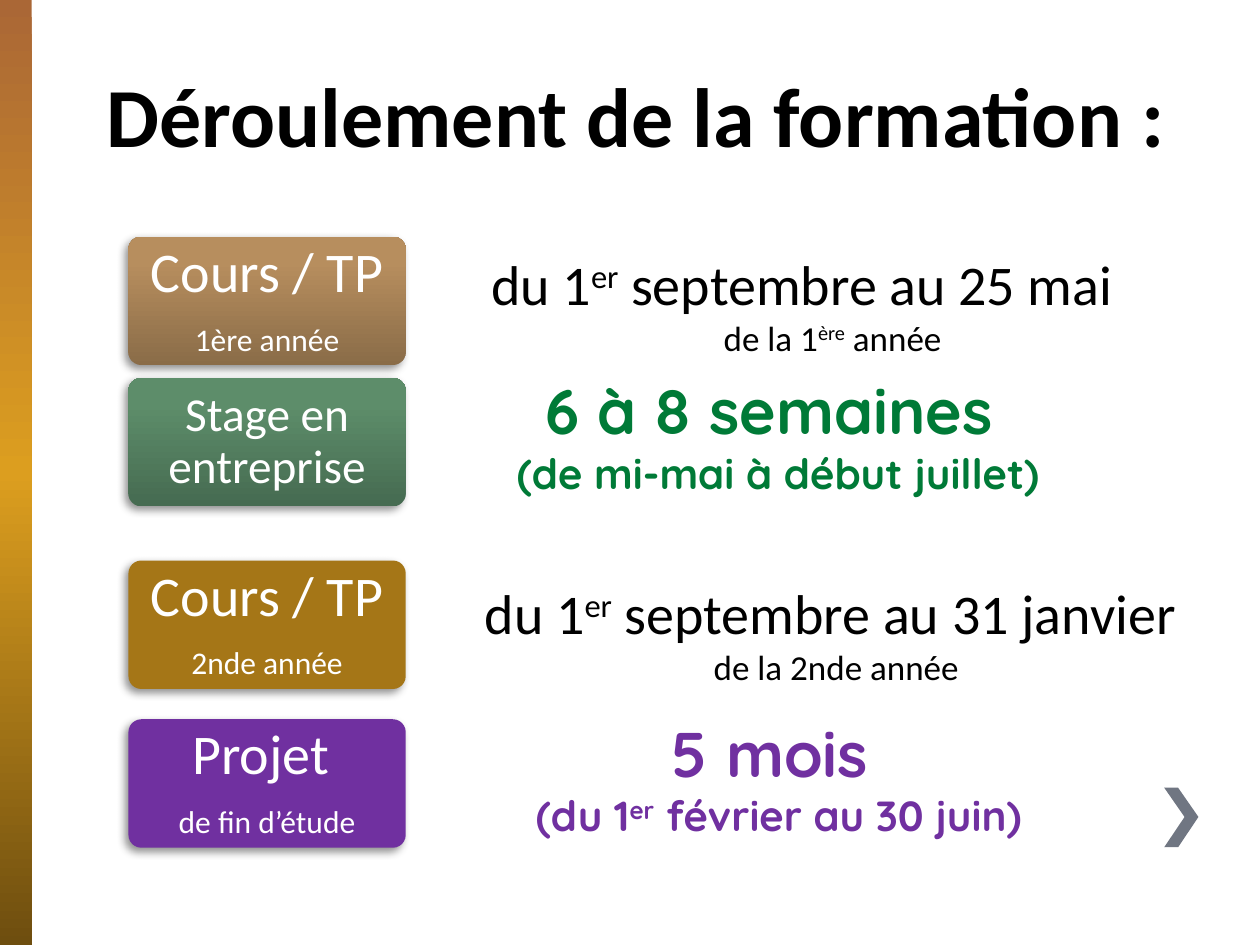
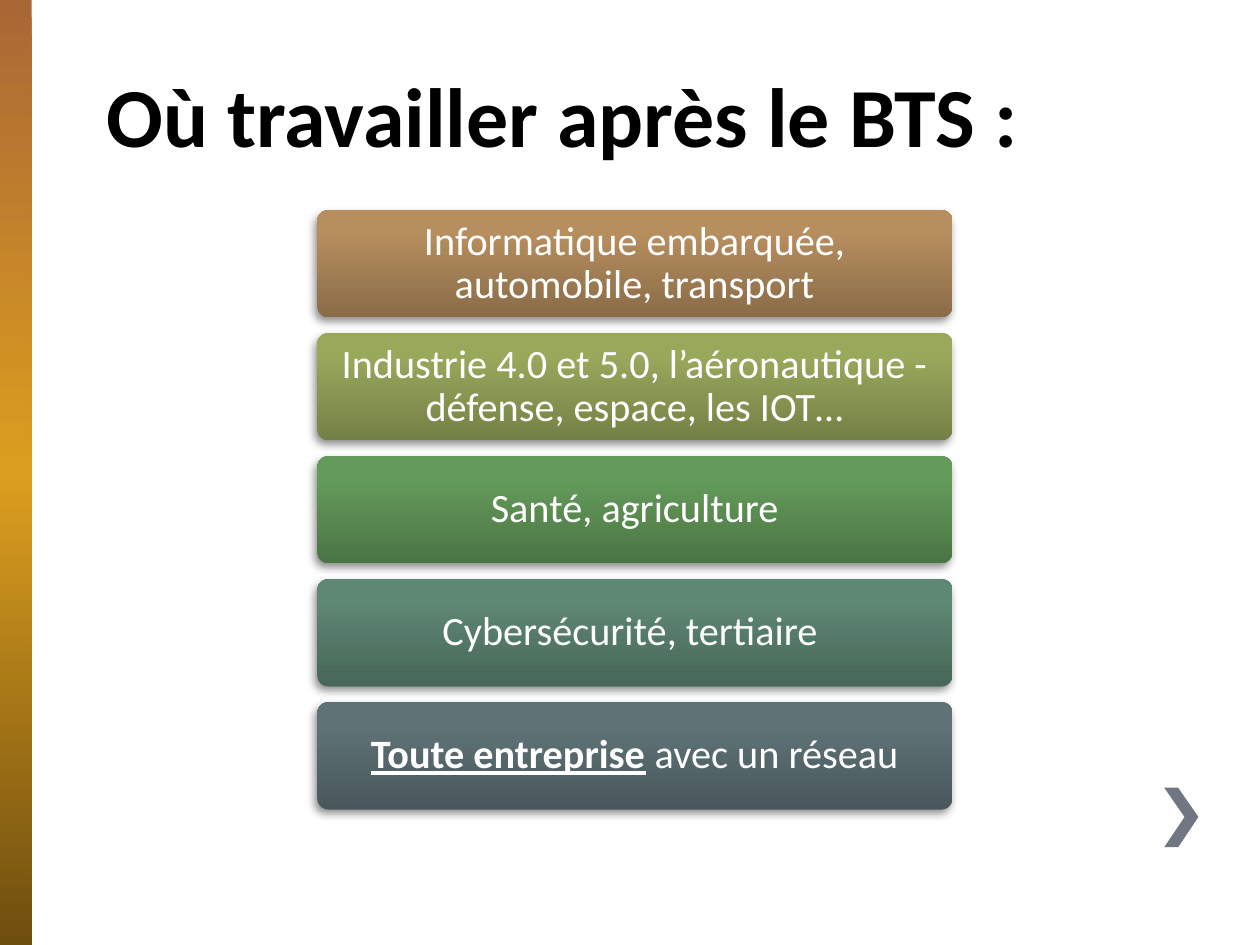
from dataclasses import dataclass
from copy import deepcopy
from lxml.etree import SubElement
from pptx import Presentation
from pptx.dml.color import RGBColor
from pptx.enum.shapes import MSO_SHAPE
from pptx.enum.text import MSO_ANCHOR, PP_ALIGN
from pptx.oxml.ns import qn
from pptx.shapes.autoshape import Shape
from pptx.slide import Slide
from pptx.text.text import TextFrame
from pptx.util import Cm, Pt

COLORS = {
    "black": "000000", "white": "FFFFFF", "chevron": "707682", "shadow": "000000",
    "gold": "A57617", "purple": "7030A0", "green": "007A37",
}
BLENDS = {
    "band": ((0, "AA6736"), (50, "DC9E1F"), (100, "6E4E0F")),
    "brown": ((0, "8A6C48"), (80, "B78E5E"), (100, "BA8E5C")),
    "forest": ((0, "466B51"), (80, "5D8D6A"), (100, "5D8F69")),
    "olive": ((0, "758046"), (80, "9AA85C"), (100, "9BAB5B")),
    "leaf": ((0, "4B7545"), (80, "649B5A"), (100, "639C5A")),
    "teal": ((0, "476758"), (80, "5E8774"), (100, "5E8974")),
    "slate": ((0, "48575B"), (80, "5F7377"), (100, "5F7478")),
}
UPWARD, DOWNWARD = 90, 270
CHEVRON = ((23.75, 15.88), (23.47, 15.88), (23.88, 16.47),
           (23.47, 17.08), (23.75, 17.08), (24.16, 16.47))
HEIGHT = 19.05


@dataclass(frozen=True)
class Area:
    left: float
    top: float
    width: float
    height: float

    def lengths(self) -> tuple:
        return Cm(self.left), Cm(self.top), Cm(self.width), Cm(self.height)


@dataclass(frozen=True)
class Line:
    text: str
    size: float
    center: bool = True
    before: float = 0


@dataclass(frozen=True)
class Style:
    color: str
    font: str = "Calibri"
    bold: bool = False
    spacing: float = 1.0
    mark: str = "raise"


@dataclass(frozen=True)
class Card:
    area: Area
    fill: str
    lines: tuple


@dataclass(frozen=True)
class Note:
    area: Area
    style: Style
    lines: tuple


TITLE = Style("black", bold=True, spacing=0.9)
LABEL = Style("white", spacing=0.9, mark="stress")
DATE = Style("black")
STAGE = Style("green", "Quicksand", True)
PROJECT = Style("purple", "Quicksand", True)


def rgb(name: str) -> RGBColor:
    return RGBColor.from_string(COLORS[name])


def write(frame: TextFrame, lines: tuple, style: Style) -> None:
    frame.word_wrap = True
    for row, line in enumerate(lines):
        para = frame.add_paragraph() if row else frame.paragraphs[0]
        para.alignment = PP_ALIGN.CENTER if line.center else PP_ALIGN.LEFT
        para.line_spacing = style.spacing
        if line.before:
            para.space_before = Pt(line.before)
        for order, piece in enumerate(line.text.split("^")):
            if not piece:
                continue
            run = para.add_run()
            run.text = piece
            font = run.font
            font.name, font.size, font.bold = style.font, Pt(line.size), style.bold
            font.color.rgb = rgb(style.color)
            if order % 2 and style.mark == "raise":
                run._r.get_or_add_rPr().set("baseline", "30000")
            elif order % 2:
                font.bold = font.underline = True


def paint(shape: Shape, fill: str, angle: int = UPWARD) -> None:
    shape.shadow.inherit = False
    shape.line.fill.background()
    if fill in COLORS:
        shape.fill.solid()
        shape.fill.fore_color.rgb = rgb(fill)
        return
    shape.fill.gradient()
    shape.fill.gradient_angle = angle
    stops = shape._element.spPr.find(".//" + qn("a:gsLst"))
    stops.append(deepcopy(stops[0]))
    for stop, (place, color) in zip(shape.fill.gradient_stops, BLENDS[fill]):
        stop.position = place / 100
        stop.color.rgb = RGBColor.from_string(color)


def shade(shape: Shape) -> None:
    effects = shape._element.spPr.find(qn("a:effectLst"))
    outer = SubElement(effects, qn("a:outerShdw"), blurRad=str(Pt(5)),
                       dist=str(Pt(3)), dir=str(135 * 60000), rotWithShape="0")
    color = SubElement(outer, qn("a:srgbClr"), val=COLORS["shadow"])
    SubElement(color, qn("a:alpha"), val="44000")


def add_note(slide: Slide, note: Note) -> Shape:
    box = slide.shapes.add_textbox(*note.area.lengths())
    write(box.text_frame, note.lines, note.style)
    return box


def add_card(slide: Slide, card: Card) -> None:
    shape = slide.shapes.add_shape(MSO_SHAPE.ROUNDED_RECTANGLE, *card.area.lengths())
    shape.adjustments[0] = 0.1
    paint(shape, card.fill)
    shade(shape)
    frame = shape.text_frame
    frame.margin_left = frame.margin_right = Cm(0.15)
    frame.margin_top = frame.margin_bottom = Cm(0.13)
    frame.vertical_anchor = MSO_ANCHOR.MIDDLE
    write(frame, card.lines, LABEL)


def add_page(deck: Presentation, title: str, width: float) -> Slide:
    slide = deck.slides.add_slide(deck.slide_layouts[6])
    band = slide.shapes.add_shape(MSO_SHAPE.RECTANGLE, *Area(0, 0, 0.64, HEIGHT).lengths())
    paint(band, "band", DOWNWARD)
    points = [(Cm(x), Cm(y)) for x, y in CHEVRON]
    builder = slide.shapes.build_freeform(*points[0])
    builder.add_line_segments(points[1:], close=True)
    paint(builder.convert_to_shape(), "chevron")
    head = add_note(slide, Note(Area(1.9, 0.84, width, 3.18), TITLE, (Line(title, 48, False),)))
    head.text_frame.vertical_anchor = MSO_ANCHOR.MIDDLE
    return slide


def course(top: float, fill: str, *lines: Line) -> Card:
    return Card(Area(2.59, top, 5.59, 2.59), fill, lines)


def pair(head: str, foot: str) -> tuple:
    return Line(head, 32), Line(foot, 18, before=11.2)


def add_course(deck: Presentation) -> None:
    slide = add_page(deck, "Déroulement de la formation :", 22.5)
    cards = (
        course(4.77, "brown", *pair("Cours / TP", "1ère année")),
        course(7.62, "forest", Line("Stage en entreprise", 27)),
        course(11.3, "gold", *pair("Cours / TP", "2nde année")),
        course(14.5, "purple", *pair("Projet ", "de fin d’étude")),
    )
    notes = (
        Note(Area(9.65, 4.9, 14.27, 2.49), DATE,
             (Line("du 1^er^ septembre au 25 mai", 32, False), Line("de la 1^ère^ année", 20))),
        Note(Area(8.79, 7.37, 13.79, 2.82), STAGE,
             (Line("6 à 8 semaines ", 36), Line("(de mi-mai à début juillet)", 24))),
        Note(Area(9.52, 11.53, 14.68, 2.49), DATE,
             (Line("du 1^er^ septembre au 31 janvier", 32, False), Line("de la 2nde année", 20))),
        Note(Area(9.4, 14.27, 12.6, 2.82), PROJECT,
             (Line("5 mois ", 36), Line("(du 1^er^ février au 30 juin)", 24))),
    )
    for card in cards:
        add_card(slide, card)
    for note in notes:
        add_note(slide, note)


def add_jobs(deck: Presentation) -> None:
    slide = add_page(deck, "Où travailler après le BTS :", 20.12)
    jobs = (
        ("brown", "Informatique embarquée, automobile, transport"),
        ("olive", "Industrie 4.0 et 5.0, l’aéronautique - défense, espace, les IOT…"),
        ("leaf", "Santé, agriculture"),
        ("teal", "Cybersécurité, tertiaire "),
        ("slate", "^Toute entreprise^ avec un réseau"),
    )
    for row, (fill, text) in enumerate(jobs):
        area = Area(6.4, 4.24 + row * 2.48, 12.8, 2.16)
        add_card(slide, Card(area, fill, (Line(text, 23),)))


def main() -> None:
    deck = Presentation()
    deck.slide_width, deck.slide_height = Cm(25.4), Cm(HEIGHT)
    add_course(deck)
    add_jobs(deck)
    deck.save("out.pptx")


if __name__ == "__main__":
    main()
